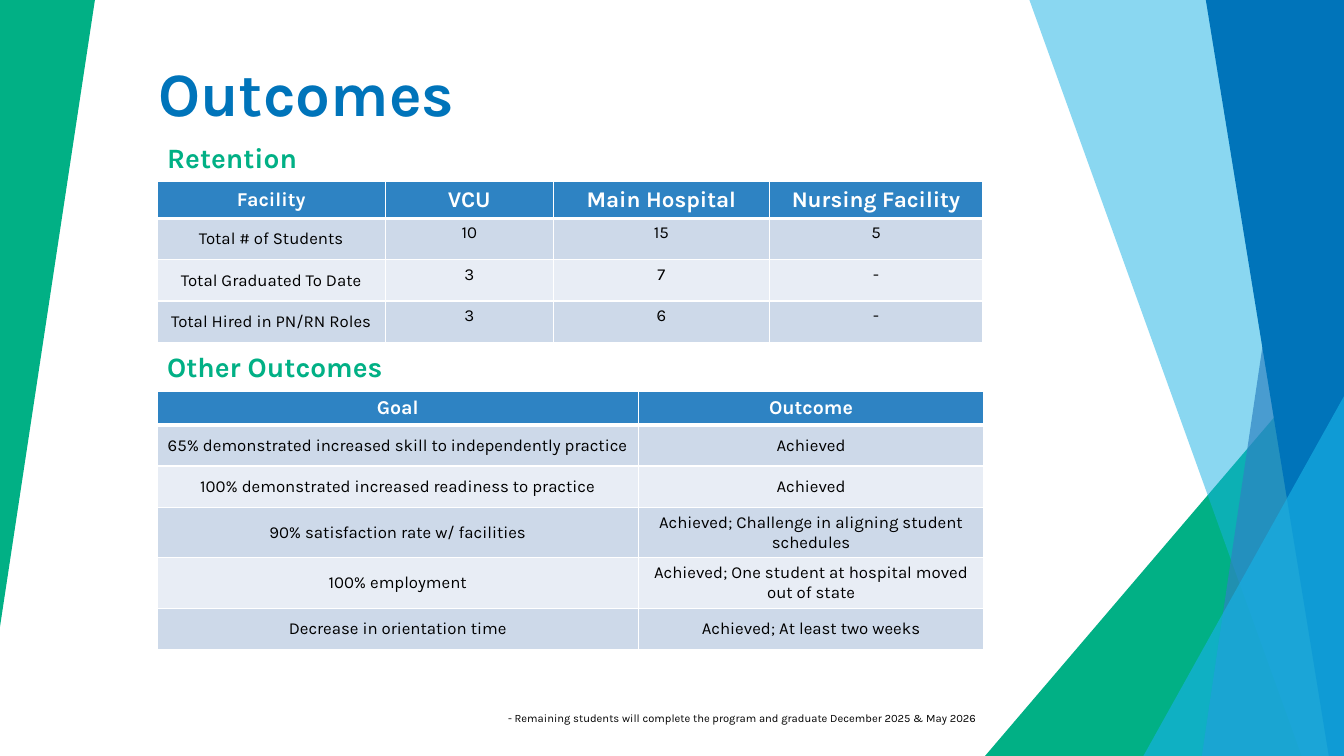
from dataclasses import dataclass

from lxml import etree
from pptx import Presentation
from pptx.dml.color import RGBColor
from pptx.enum import shapes, text
from pptx.oxml import ns
from pptx.util import Inches, Pt

FONT = "Karla"
COLORS = {
    "green": "01B085",
    "sky": "17B0E4",
    "steel": "2E83C3",
    "blue": "0074BA",
    "band_dark": "CDD9E9",
    "band_light": "E8EDF5",
    "white": "FFFFFF",
    "black": "000000",
}


@dataclass
class Facet:
    """A flat polygon given by its corner points."""
    color: str
    points: list[tuple[float, float]]
    opacity: int = 100


@dataclass
class Triangle:
    color: str
    box: tuple[float, float, float, float]
    opacity: int = 100


@dataclass
class Label:
    words: str
    box: tuple[float, float, float, float]
    size: int
    color: str
    bold: bool = False


@dataclass
class Grid:
    top: float
    columns: list[float]
    heights: list[float]
    rows: list[list[str]]
    header_sizes: list[int]
    values_anchor: text.MSO_ANCHOR


DECOR = [
    Facet("green", [(0, 0), (0.94, 0), (0.94, 0.01), (0, 6.22)]),
    Triangle("green", (9.77, 3.33, 3.56, 4.17)),
    Facet("sky", [(10.21, 0), (13.33, 0), (13.33, 7.5), (12.91, 7.5)], 50),
    Facet("steel", [(13.03, 0), (13.33, 0), (13.33, 7.5), (11.92, 7.5)], 70),
    Facet("blue", [(11.96, 0), (13.33, 0), (13.33, 7.5), (13.18, 7.5)]),
    Triangle("sky", (11.34, 3.93, 1.99, 3.57), 66),
]

LABELS = [
    Label("Retention", (1.56, 1.34, 9.01, 0.44), 20, "green", True),
    Label("Other Outcomes", (1.56, 3.42, 9.01, 0.44), 20, "green", True),
    Label("- Remaining students will complete the program and graduate "
          "December 2025 & May 2026", (4.94, 7.01, 5.28, 0.24), 8, "black"),
]

GRIDS = [
    Grid(1.8, [2.26, 1.67, 2.14, 2.12], [0.36, 0.41, 0.41, 0.41], [
        ["Facility", "VCU", "Main Hospital", "Nursing Facility"],
        ["Total # of Students", "10", "15", "5"],
        ["Total Graduated To Date", "3", "7", "-"],
        ["Total Hired in PN/RN Roles", "3", "6", "-"],
    ], [14, 16, 16, 16], text.MSO_ANCHOR.TOP),
    Grid(3.88, [4.77, 3.43], [0.33, 0.41, 0.41, 0.5, 0.5, 0.41], [
        ["Goal", "Outcome"],
        ["65% demonstrated increased skill to independently practice", "Achieved"],
        ["100% demonstrated increased readiness to practice", "Achieved"],
        ["90% satisfaction rate w/ facilities",
         "Achieved; Challenge in aligning student schedules"],
        ["100% employment", "Achieved; One student at hospital moved out of state"],
        ["Decrease in orientation time", "Achieved; At least two weeks"],
    ], [14, 14], text.MSO_ANCHOR.MIDDLE),
]


def rgb(name: str) -> RGBColor:
    return RGBColor.from_string(COLORS[name])


def add_run(paragraph, words: str, size: int, color: str, bold: bool) -> None:
    run = paragraph.add_run()
    run.text = words
    run.font.name = FONT
    run.font.size = Pt(size)
    run.font.bold = bold
    run.font.color.rgb = rgb(color)


def add_decor(slide, piece: Facet | Triangle) -> None:
    if isinstance(piece, Triangle):
        shape = slide.shapes.add_shape(
            shapes.MSO_SHAPE.ISOSCELES_TRIANGLE, *map(Inches, piece.box))
        shape.adjustments[0] = 1
    else:
        start, *others = [(Inches(x), Inches(y)) for x, y in piece.points]
        builder = slide.shapes.build_freeform(*start)
        builder.add_line_segments(others, close=True)
        shape = builder.convert_to_shape()
    shape.shadow.inherit = False
    shape.line.fill.background()
    shape.fill.solid()
    shape.fill.fore_color.rgb = rgb(piece.color)
    if piece.opacity < 100:
        color = shape.fill._xPr.find(".//" + ns.qn("a:srgbClr"))
        etree.SubElement(color, ns.qn("a:alpha"), val=str(piece.opacity * 1000))


def add_label(slide, label: Label) -> None:
    frame = slide.shapes.add_textbox(*map(Inches, label.box)).text_frame
    frame.word_wrap = True
    add_run(frame.paragraphs[0], label.words, label.size, label.color, label.bold)


def add_border(cell, side: str, width: int) -> None:
    line = etree.SubElement(cell._tc.get_or_add_tcPr(), ns.qn(f"a:ln{side}"),
                            w=str(Pt(width)))
    fill = etree.SubElement(line, ns.qn("a:solidFill"))
    etree.SubElement(fill, ns.qn("a:srgbClr"), val=COLORS["white"])


def add_grid(slide, grid: Grid) -> None:
    frame = slide.shapes.add_table(
        len(grid.rows), len(grid.columns), Inches(1.56), Inches(grid.top),
        Inches(sum(grid.columns)), Inches(sum(grid.heights)))
    table = frame.table
    for column, width in zip(table.columns, grid.columns):
        column.width = Inches(width)
    for row, height in zip(table.rows, grid.heights):
        row.height = Inches(height)
    for r, entries in enumerate(grid.rows):
        header = r == 0
        band = "steel" if header else "band_dark" if r % 2 else "band_light"
        for c, words in enumerate(entries):
            cell = table.cell(r, c)
            for side in "LRTB":
                thick = (header and side == "B") or (r == 1 and side == "T")
                add_border(cell, side, 3 if thick else 1)
            cell.fill.solid()
            cell.fill.fore_color.rgb = rgb(band)
            cell.vertical_anchor = (
                text.MSO_ANCHOR.MIDDLE if header or c == 0 else grid.values_anchor)
            paragraph = cell.text_frame.paragraphs[0]
            paragraph.alignment = text.PP_ALIGN.CENTER
            add_run(paragraph, words, grid.header_sizes[c] if header else 12,
                    "white" if header else "black", header)


def add_title(slide, words: str) -> None:
    title = slide.shapes.title
    title.left, title.top = Inches(1.47), Inches(0.49)
    title.width, title.height = Inches(8.75), Inches(0.84)
    frame = title.text_frame
    frame.auto_size = text.MSO_AUTO_SIZE.NONE
    frame.vertical_anchor = text.MSO_ANCHOR.MIDDLE
    frame.paragraphs[0].alignment = text.PP_ALIGN.LEFT
    add_run(frame.paragraphs[0], words, 44, "blue", True)


def main() -> None:
    presentation = Presentation()
    presentation.slide_width = Inches(13.33)
    presentation.slide_height = Inches(7.5)
    slide = presentation.slides.add_slide(presentation.slide_layouts[5])
    for piece in DECOR:
        add_decor(slide, piece)
    add_title(slide, "Outcomes")
    for label in LABELS:
        add_label(slide, label)
    for grid in GRIDS:
        add_grid(slide, grid)
    presentation.save("out.pptx")


if __name__ == "__main__":
    main()
